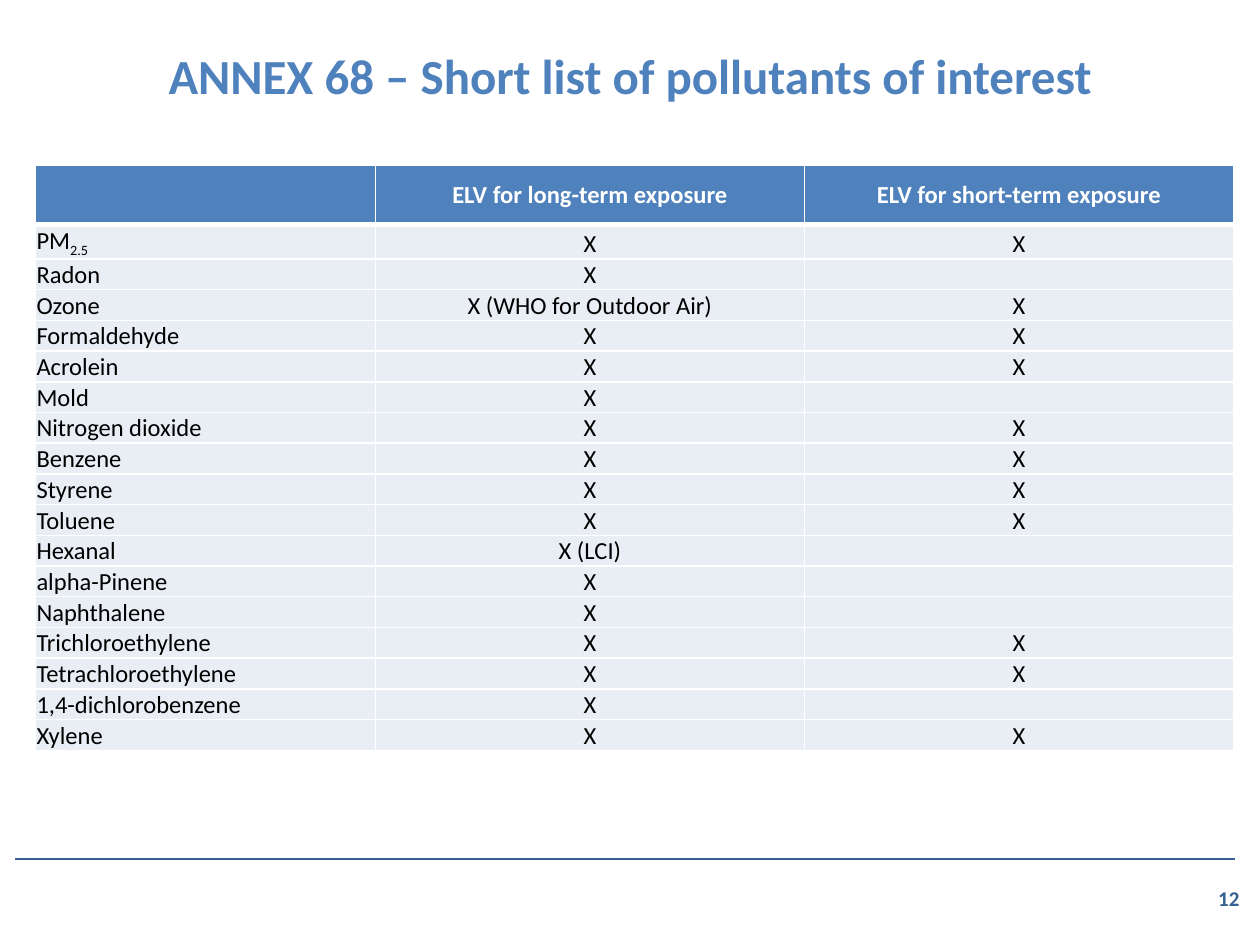
import pptx
import pptx.util
import pptx.dml.color
import pptx.enum.shapes
import pptx.enum.text
import pptx.oxml.ns
import lxml.etree

Inches = pptx.util.Inches
Pt = pptx.util.Pt
RGB = pptx.dml.color.RGBColor
Align = pptx.enum.text.PP_ALIGN
Anchor = pptx.enum.text.MSO_ANCHOR
qn = pptx.oxml.ns.qn

BLUE = RGB(0x4F, 0x81, 0xBD)
NAVY = RGB(0x37, 0x60, 0x92)
PALE = RGB(0xE9, 0xED, 0xF4)
WHITE = RGB(0xFF, 0xFF, 0xFF)
BLACK = RGB(0, 0, 0)

HEADS = ("", "ELV for long-term exposure", "ELV for short-term exposure")
ROWS = (
    ("PM", "X", "X"),
    ("Radon", "X", ""),
    ("Ozone", "X (WHO for Outdoor Air)", "X"),
    ("Formaldehyde", "X", "X"),
    ("Acrolein", "X", "X"),
    ("Mold", "X", ""),
    ("Nitrogen dioxide", "X", "X"),
    ("Benzene", "X", "X"),
    ("Styrene", "X", "X"),
    ("Toluene", "X", "X"),
    ("Hexanal", "X (LCI)", ""),
    ("alpha-Pinene", "X", ""),
    ("Naphthalene", "X", ""),
    ("Trichloroethylene", "X", "X"),
    ("Tetrachloroethylene", "X", "X"),
    ("1,4-dichlorobenzene", "X", ""),
    ("Xylene", "X", "X"),
)


def set_font(para, size, color, bold):
    font = para.font
    font.name = "Calibri"
    font.size = Pt(size)
    font.bold = bold
    font.color.rgb = color


def place(shape, left, top, width, height):
    shape.left, shape.top = Inches(left), Inches(top)
    shape.width, shape.height = Inches(width), Inches(height)


def add_title(slide, left, top, width, height):
    title = slide.shapes.title
    place(title, left, top, width, height)
    frame = title.text_frame
    frame.text = "ANNEX 68 – Short list of pollutants of interest"
    frame.vertical_anchor = Anchor.MIDDLE
    para = frame.paragraphs[0]
    para.alignment = Align.CENTER
    set_font(para, 28, BLUE, True)


def set_lines(cell, base):
    props = cell._tc.get_or_add_tcPr()
    widths = {"a:lnL": 1, "a:lnR": 1, "a:lnT": 1, "a:lnB": base}
    for tag, width in widths.items():
        line = lxml.etree.SubElement(props, qn(tag), w=str(Pt(width)))
        fill = lxml.etree.SubElement(line, qn("a:solidFill"))
        lxml.etree.SubElement(fill, qn("a:srgbClr"), val=str(WHITE))


def fill_cell(cell, text, head, first):
    set_lines(cell, 3 if head else 1)
    cell.fill.solid()
    cell.fill.fore_color.rgb = BLUE if head else PALE
    cell.margin_left = cell.margin_right = cell.margin_top = Inches(0.01)
    cell.margin_bottom = 0
    cell.vertical_anchor = Anchor.MIDDLE if head else Anchor.BOTTOM
    para = cell.text_frame.paragraphs[0]
    para.alignment = Align.LEFT if first else Align.CENTER
    set_font(para, 14, WHITE if head else BLACK, head)
    if text:
        para.add_run().text = text
    else:
        lxml.etree.SubElement(para._p, qn("a:endParaRPr"), sz="1400")


def add_grid(slide, left, top, width, height):
    data = (HEADS,) + ROWS
    frame = slide.shapes.add_table(
        len(data), len(HEADS), Inches(left), Inches(top),
        Inches(width), Inches(height))
    table = frame.table
    name, head = 2.7, 0.47
    for i, col in enumerate(table.columns):
        col.width = Inches((width - name) / 2 if i else name)
    for i, row in enumerate(table.rows):
        row.height = Inches((height - head) / len(ROWS) if i else head)
        for j, text in enumerate(data[i]):
            fill_cell(table.cell(i, j), text, i == 0, j == 0)
    sub = table.cell(1, 0).text_frame.paragraphs[0].add_run()
    sub.text = "2.5"
    sub._r.get_or_add_rPr().set("baseline", "-25000")


def add_foot(slide, left, top, width):
    line = slide.shapes.add_connector(
        pptx.enum.shapes.MSO_CONNECTOR.STRAIGHT, Inches(left), Inches(top),
        Inches(left + width), Inches(top))
    line.line.color.rgb = NAVY
    line.line.width = Pt(1)
    lxml.etree.SubElement(line._element.spPr, qn("a:effectLst"))
    box = slide.shapes.add_textbox(0, 0, 0, 0)
    place(box, 9.57, top + 0.11, 0.43, 0.4)
    frame = box.text_frame
    frame.word_wrap = True
    frame.vertical_anchor = Anchor.MIDDLE
    frame.text = "12"
    set_font(frame.paragraphs[0], 12, NAVY, True)


def main():
    deck = pptx.Presentation()
    deck.slide_width, deck.slide_height = Inches(10), Inches(7.5)
    slide = deck.slides.add_slide(deck.slide_layouts[5])
    add_title(slide, 0.5, -0.03, 9, 1.25)
    add_foot(slide, 0.12, 6.82, 9.68)
    add_grid(slide, 0.28, 1.31, 9.51, 4.1)
    deck.save("out.pptx")


if __name__ == "__main__":
    main()
